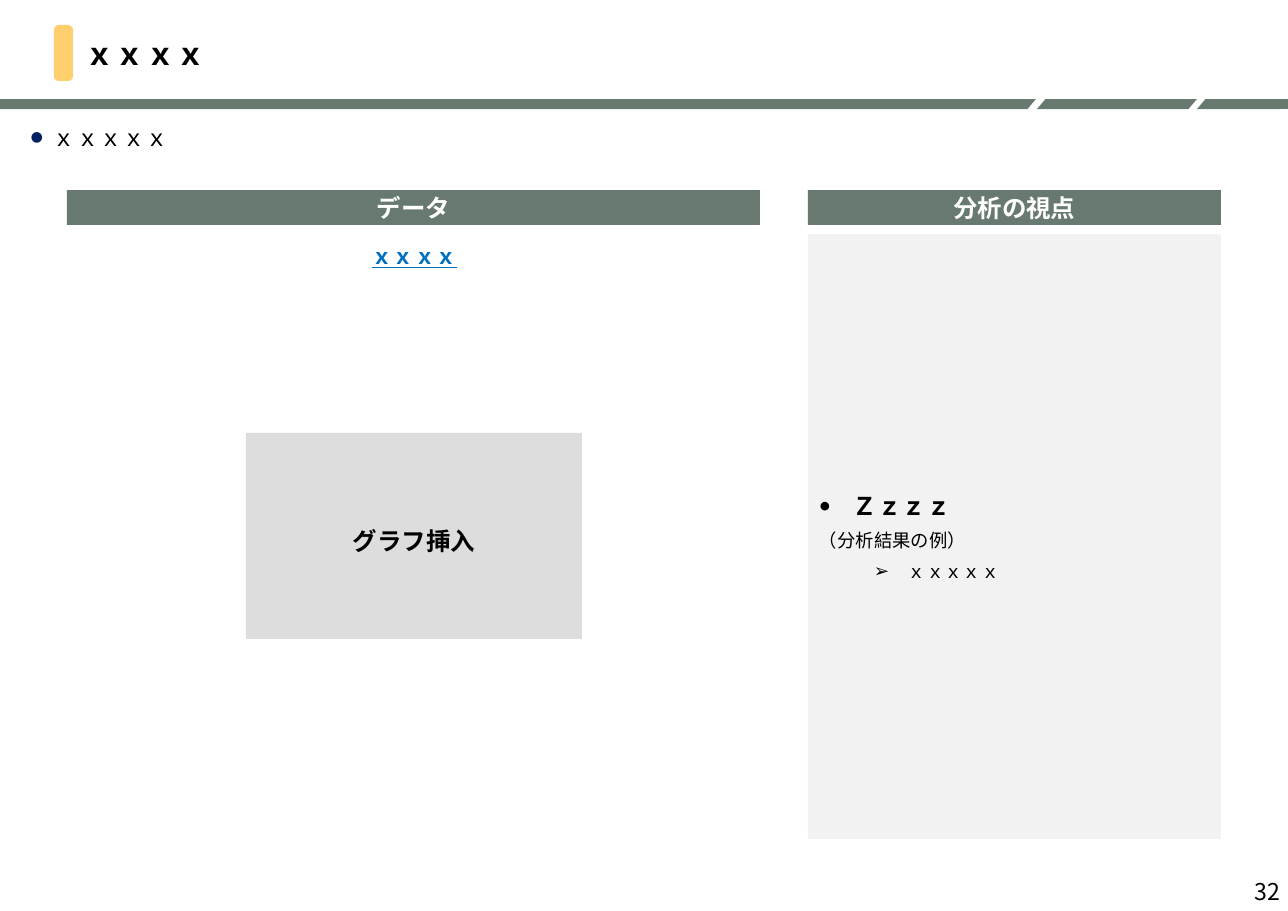
from dataclasses import dataclass

from lxml import etree
from pptx import Presentation
from pptx.dml.color import RGBColor
from pptx.enum.shapes import MSO_SHAPE
from pptx.enum.text import MSO_ANCHOR, PP_ALIGN
from pptx.oxml.ns import qn
from pptx.util import Pt

EMU_PER_PX = 8298
PARALLELOGRAM = MSO_SHAPE.PARALLELOGRAM
RECTANGLE = MSO_SHAPE.RECTANGLE
ROUNDED = MSO_SHAPE.ROUNDED_RECTANGLE
TOP, MIDDLE = MSO_ANCHOR.TOP, MSO_ANCHOR.MIDDLE
LEFT, CENTER, RIGHT = PP_ALIGN.LEFT, PP_ALIGN.CENTER, PP_ALIGN.RIGHT
JAPANESE, LATIN = "Noto Sans CJK JP", "Calibri"
GREEN, YELLOW, BLACK, WHITE = "687A70", "FFCE6D", "000000", "FFFFFF"
INSETS = (11, 6, 11, 6)


@dataclass
class Block:
    left: int
    top: int
    width: int
    height: int
    fill: str
    kind: int = RECTANGLE
    adjustment: float | None = None


@dataclass
class Line:
    text: str
    size: float
    color: str = BLACK
    bold: bool = False
    underline: bool = False
    font: str = JAPANESE
    align: int = LEFT
    after: int = 0
    margin: int = 0
    hanging: int = 0
    bullet: str = ""
    bullet_color: str = BLACK


BAND = [
    Block(left, 99, width, 10, GREEN, kind, adjustment)
    for left, width, kind, adjustment in (
        (0, 1036, PARALLELOGRAM, 0.85),
        (1037, 160, PARALLELOGRAM, 0.85),
        (1197, 91, PARALLELOGRAM, 0.85),
        (0, 160, RECTANGLE, None),
        (1221, 67, RECTANGLE, None),
    )
]
TITLE_MARK = Block(54, 25, 19, 56, YELLOW, ROUNDED, 0.25)
HEADINGS = [("データ", 67, 693), ("分析の視点", 808, 413)]
VIEWPOINT_PANEL = Block(808, 234, 413, 605, "F2F2F2")
CHART_AREA = Block(246, 433, 336, 206, "BFBFBF")
VIEWPOINTS = [
    Line("Ｚｚｚｚ", 16, bold=True, after=6, margin=34, hanging=34, bullet="•"),
    Line("（分析結果の例）", 12, after=6),
    Line("ｘｘｘｘｘ", 12, after=6, margin=89, hanging=34, bullet="➢"),
]


def px(value: int) -> int:
    return value * EMU_PER_PX


def rgb(color: str) -> RGBColor:
    return RGBColor.from_string(color)


def add_bullet(properties, line: Line) -> None:
    color = etree.SubElement(properties, qn("a:buClr"))
    etree.SubElement(color, qn("a:srgbClr"), val=line.bullet_color)
    etree.SubElement(properties, qn("a:buFont"), typeface=LATIN)
    etree.SubElement(properties, qn("a:buChar"), char=line.bullet)


def write_lines(shape, lines: list[Line], anchor=MIDDLE, insets=INSETS) -> None:
    frame = shape.text_frame
    frame.word_wrap = True
    frame.vertical_anchor = anchor
    for side, inset in zip(("left", "top", "right", "bottom"), insets):
        setattr(frame, f"margin_{side}", px(inset))
    for index, line in enumerate(lines):
        paragraph = frame.add_paragraph() if index else frame.paragraphs[0]
        properties = paragraph._p.get_or_add_pPr()
        properties.set("marL", str(px(line.margin)))
        properties.set("indent", str(px(-line.hanging)))
        if line.bullet:
            add_bullet(properties, line)
        paragraph.alignment = line.align
        paragraph.space_before = Pt(0)
        paragraph.space_after = Pt(line.after)
        run = paragraph.add_run()
        run.text = line.text
        formats = {"size": Pt(line.size), "bold": line.bold,
                   "underline": line.underline, "name": line.font}
        for name, value in formats.items():
            setattr(run.font, name, value)
        run.font.color.rgb = rgb(line.color)
        etree.SubElement(run._r.get_or_add_rPr(), qn("a:ea"), typeface=JAPANESE)


def add_block(slide, block: Block):
    shape = slide.shapes.add_shape(
        block.kind, *map(px, (block.left, block.top, block.width, block.height)))
    shape.shadow.inherit = False
    shape.fill.solid()
    shape.fill.fore_color.rgb = rgb(block.fill)
    shape.line.fill.background()
    if block.adjustment is not None:
        shape.adjustments[0] = block.adjustment
    return shape


def add_text(slide, box: tuple[int, ...], line: Line, anchor=MIDDLE, insets=INSETS) -> None:
    write_lines(slide.shapes.add_textbox(*map(px, box)), [line], anchor, insets)


def set_opacity(shape, percent: int) -> None:
    color = shape.fill._xPr.find(f"{qn('a:solidFill')}/{qn('a:srgbClr')}")
    etree.SubElement(color, qn("a:alpha"), val=str(percent * 1000))


def add_title(slide, text: str) -> None:
    title = slide.shapes.title
    box = {"left": 73, "top": 25, "width": 1185, "height": 56}
    for name, value in box.items():
        setattr(title, name, px(value))
    write_lines(title, [Line(text, 20, bold=True)])


def main() -> None:
    presentation = Presentation()
    presentation.slide_width, presentation.slide_height = px(1288), px(911)
    slide = presentation.slides.add_slide(presentation.slide_layouts[5])

    for block in [*BAND, TITLE_MARK]:
        add_block(slide, block)
    add_title(slide, "ｘｘｘｘ")
    add_text(slide, (26, 119, 1236, 37),
             Line("ｘｘｘｘｘ", 15.1, margin=23, hanging=23, bullet="●", bullet_color="002060"),
             TOP, (4, 4, 4, 4))
    add_text(slide, (990, 867, 301, 48), Line("32", 15.1, align=RIGHT))

    for text, left, width in HEADINGS:
        heading = add_block(slide, Block(left, 190, width, 35, GREEN))
        write_lines(heading, [Line(text, 16, WHITE, bold=True, align=CENTER)])
    write_lines(add_block(slide, VIEWPOINT_PANEL), VIEWPOINTS)

    add_text(slide, (139, 236, 551, 39),
             Line("ｘｘｘｘ", 14, "0070C0", bold=True, underline=True, align=CENTER, after=6))
    chart_area = add_block(slide, CHART_AREA)
    set_opacity(chart_area, 52)
    write_lines(chart_area, [Line("グラフ挿入", 16, bold=True, font=LATIN, align=CENTER)],
                insets=(13, 18, 13, 9))

    presentation.save("out.pptx")


if __name__ == "__main__":
    main()
